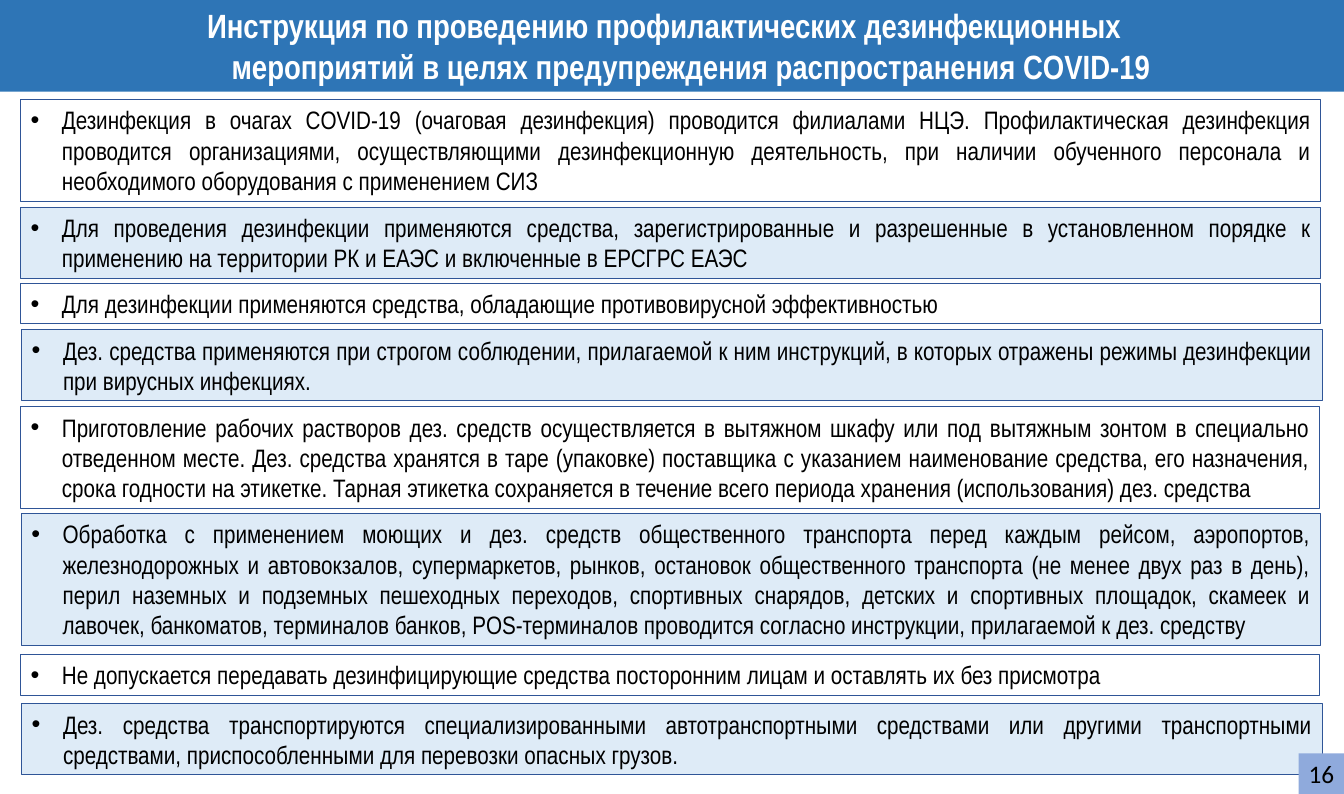
"""Build the slide with disinfection instructions for COVID-19 prevention."""
import pptx
import pptx.util
import pptx.dml.color
import pptx.enum.text
import pptx.oxml
import pptx.oxml.ns
from lxml import etree

Cm, Pt = pptx.util.Cm, pptx.util.Pt
ALIGN = pptx.enum.text.PP_ALIGN
ANCHOR = pptx.enum.text.MSO_ANCHOR
FIT = pptx.enum.text.MSO_AUTO_SIZE.SHAPE_TO_FIT_TEXT
COLORS = {
    "header": "2E75B6",
    "band": "DEEBF7",
    "border": "2F5597",
    "number": "8FAADC",
    "white": "FFFFFF",
    "black": "000000",
}


def rgb(name):
    return pptx.dml.color.RGBColor.from_string(COLORS[name])


def write(p, text, size=18, font="Arial Narrow", color="black", bold=False,
          align=ALIGN.LEFT, left=0, right=0, bullet=False):
    p.alignment = align
    p.line_spacing = 1.0
    pPr = p._p.get_or_add_pPr()
    pPr.set("marL", str(Cm(left)))
    pPr.set("marR", str(Cm(right)))
    if bullet:
        pPr.set("indent", str(-Cm(left)))
        bu_font = etree.SubElement(pPr, pptx.oxml.ns.qn("a:buFont"))
        bu_font.set("typeface", "Arial")
        etree.SubElement(pPr, pptx.oxml.ns.qn("a:buChar")).set("char", "•")
    r = p.add_run()
    r.text = text
    r.font.size = Pt(size)
    r.font.name = font
    r.font.bold = bold
    r.font.color.rgb = rgb(color)


prs = pptx.Presentation()
prs.slide_width, prs.slide_height = Cm(33.87), Cm(20)
s = prs.slides.add_slide(prs.slide_layouts[5])

title = s.shapes.title
title.left, title.top, title.width, title.height = Cm(0), Cm(0), prs.slide_width, Cm(2.31)
title.fill.solid()
title.fill.fore_color.rgb = rgb("header")
tf = title.text_frame
tf.auto_size = FIT
tf.vertical_anchor = ANCHOR.TOP
heading = dict(size=24, color="white", bold=True, align=ALIGN.CENTER)
write(tf.paragraphs[0], "Инструкция по проведению профилактических дезинфекционных",
      right=0.4, **heading)
write(tf.add_paragraph(), "мероприятий в целях предупреждения распространения COVID-19",
      left=0.96, **heading)

rules = [
    (0.52, 2.51, 32.77, 3, "Дезинфекция в очагах COVID-19 (очаговая дезинфекция) проводится филиалами "
     "НЦЭ. Профилактическая дезинфекция проводится организациями, осуществляющими дезинфекционную "
     "деятельность, при наличии обученного персонала и необходимого оборудования с применением СИЗ"),
    (0.52, 5.22, 32.77, 2, "Для проведения дезинфекции применяются средства, зарегистрированные и "
     "разрешенные в установленном порядке к применению на территории РК и ЕАЭС и включенные "
     "в ЕРСГРС ЕАЭС"),
    (0.52, 7.14, 32.77, 1, "Для дезинфекции применяются средства, обладающие противовирусной "
     "эффективностью"),
    (0.55, 8.31, 32.77, 2, "Дез. средства применяются при строгом соблюдении, прилагаемой к ним "
     "инструкций, в которых отражены режимы дезинфекции при вирусных инфекциях."),
    (0.52, 10.25, 32.74, 3, "Приготовление рабочих растворов дез. средств осуществляется в вытяжном шкафу "
     "или под вытяжным зонтом в специально отведенном месте. Дез. средства хранятся в таре (упаковке) "
     "поставщика с указанием наименование средства, его назначения, срока годности на этикетке. "
     "Тарная этикетка сохраняется в течение всего периода хранения (использования) дез. средства"),
    (0.54, 12.94, 32.74, 4, "Обработка с применением моющих и дез. средств общественного транспорта перед "
     "каждым рейсом, аэропортов, железнодорожных и автовокзалов, супермаркетов, рынков, остановок "
     "общественного транспорта (не менее двух раз в день), перил наземных и подземных пешеходных "
     "переходов, спортивных снарядов, детских и спортивных площадок, скамеек и лавочек, банкоматов, "
     "терминалов банков, POS-терминалов проводится согласно инструкции, прилагаемой к дез. средству"),
    (0.52, 16.49, 32.74, 1, "Не допускается передавать дезинфицирующие средства посторонним лицам "
     "и оставлять их без присмотра"),
    (0.55, 17.73, 32.77, 2, "Дез. средства транспортируются специализированными автотранспортными "
     "средствами или другими транспортными средствами, приспособленными для перевозки опасных грузов."),
]
for i, (left, top, width, lines, text) in enumerate(rules):
    sp = s.shapes.add_textbox(Cm(left), Cm(top), Cm(width), Cm(0.25 + 0.77 * lines))
    if i % 2:
        sp.fill.solid()
        sp.fill.fore_color.rgb = rgb("band")
    sp.line.color.rgb = rgb("border")
    sp.line.width = Pt(0.75)
    tf = sp.text_frame
    tf.word_wrap = True
    tf.auto_size = FIT
    write(tf.paragraphs[0], text, left=0.79, bullet=True,
          align=ALIGN.JUSTIFY if lines > 1 else ALIGN.LEFT)

number = s.shapes.add_textbox(Cm(32.73), Cm(18.98), Cm(1.16), Cm(1.02))
number.fill.solid()
number.fill.fore_color.rgb = rgb("number")
number.text_frame.word_wrap = False
number.text_frame.auto_size = FIT
write(number.text_frame.paragraphs[0], "16", font="Calibri")

prs.save("out.pptx")
